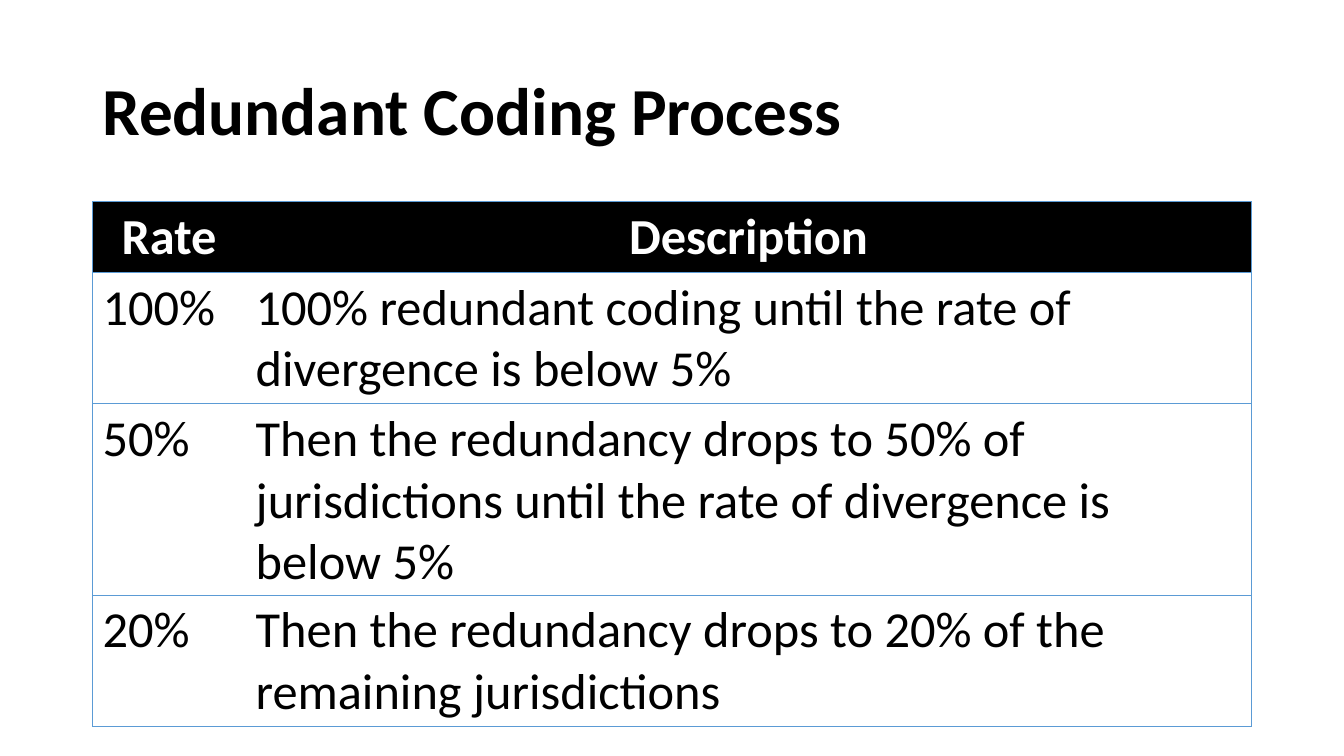
from pptx import Presentation
from pptx.dml.color import RGBColor
from pptx.enum.text import MSO_ANCHOR, PP_ALIGN
from pptx.oxml import parse_xml
from pptx.oxml.ns import nsdecls
from pptx.util import Cm, Pt


def color(value):
    return RGBColor.from_string(value)


class SlideBuilder:
    """Holds the style and the current slide, and adds elements to it."""

    font = "Calibri"
    ink, paper, rule = "000000", "FFFFFF", "5B9BD5"
    title_size, table_size, rule_width = Pt(48), Pt(36), Pt(0.5)

    def __init__(self, slide):
        self.slide = slide

    def set_text(self, frame, wording, size, ink, bold=False, align=PP_ALIGN.LEFT):
        frame.text = wording
        paragraph = frame.paragraphs[0]
        paragraph.alignment = align
        font = paragraph.runs[0].font
        font.name, font.size, font.bold = self.font, size, bold
        font.color.rgb = color(ink)
        return paragraph

    def title(self, wording, left, top, width, height):
        frame = self.slide.shapes.add_textbox(left, top, width, height).text_frame
        frame.word_wrap = True
        frame.vertical_anchor = MSO_ANCHOR.MIDDLE
        heading = self.set_text(frame, wording, self.title_size, self.ink, True)
        heading.line_spacing = 0.9

    def borders(self, cell, ruled_sides):
        properties = cell._tc.get_or_add_tcPr()
        for position, side in enumerate("LRTB"):
            paint = (f'<a:solidFill><a:srgbClr val="{self.rule}"/></a:solidFill>'
                     if side in ruled_sides else "<a:noFill/>")
            properties.insert(position, parse_xml(
                f'<a:ln{side} {nsdecls("a")} w="{self.rule_width}">{paint}</a:ln{side}>'))

    def table(self, rows, column_widths, left, top, row_height):
        table = self.slide.shapes.add_table(
            len(rows), len(column_widths), left, top,
            sum(column_widths), row_height * len(rows)).table
        for column, width in zip(table.columns, column_widths):
            column.width = width
        for row_index, row in enumerate(rows):
            table.rows[row_index].height = row_height
            for column_index, wording in enumerate(row):
                cell = table.cell(row_index, column_index)
                if row_index == 0:
                    cell.fill.solid()
                    cell.fill.fore_color.rgb = color(self.ink)
                    self.set_text(cell.text_frame, wording, self.table_size,
                                  self.paper, True, PP_ALIGN.CENTER)
                else:
                    cell.fill.background()
                    self.set_text(cell.text_frame, wording, self.table_size, self.ink)
                outer_left = "L" if column_index == 0 else ""
                outer_right = "R" if column_index == len(row) - 1 else ""
                self.borders(cell, "TB" + outer_left + outer_right)


def main():
    deck = Presentation()
    deck.slide_width, deck.slide_height = Cm(33.87), Cm(19.05)
    builder = SlideBuilder(deck.slides.add_slide(deck.slide_layouts[6]))
    margin = Cm(2.33)
    builder.title("Redundant Coding Process", margin, Cm(1.02), Cm(29.21), Cm(3.68))
    coding_stages = [
        ("Rate", "Description"),
        ("100%", "100% redundant coding until the rate of divergence is below 5%"),
        ("50%", "Then the redundancy drops to 50% of jurisdictions until "
                "the rate of divergence is below 5%"),
        ("20%", "Then the redundancy drops to 20% of the remaining jurisdictions"),
    ]
    builder.table(coding_stages, [Cm(3.86), Cm(25.35)], margin, Cm(5.08), Cm(1.04))
    deck.save("out.pptx")


if __name__ == "__main__":
    main()
